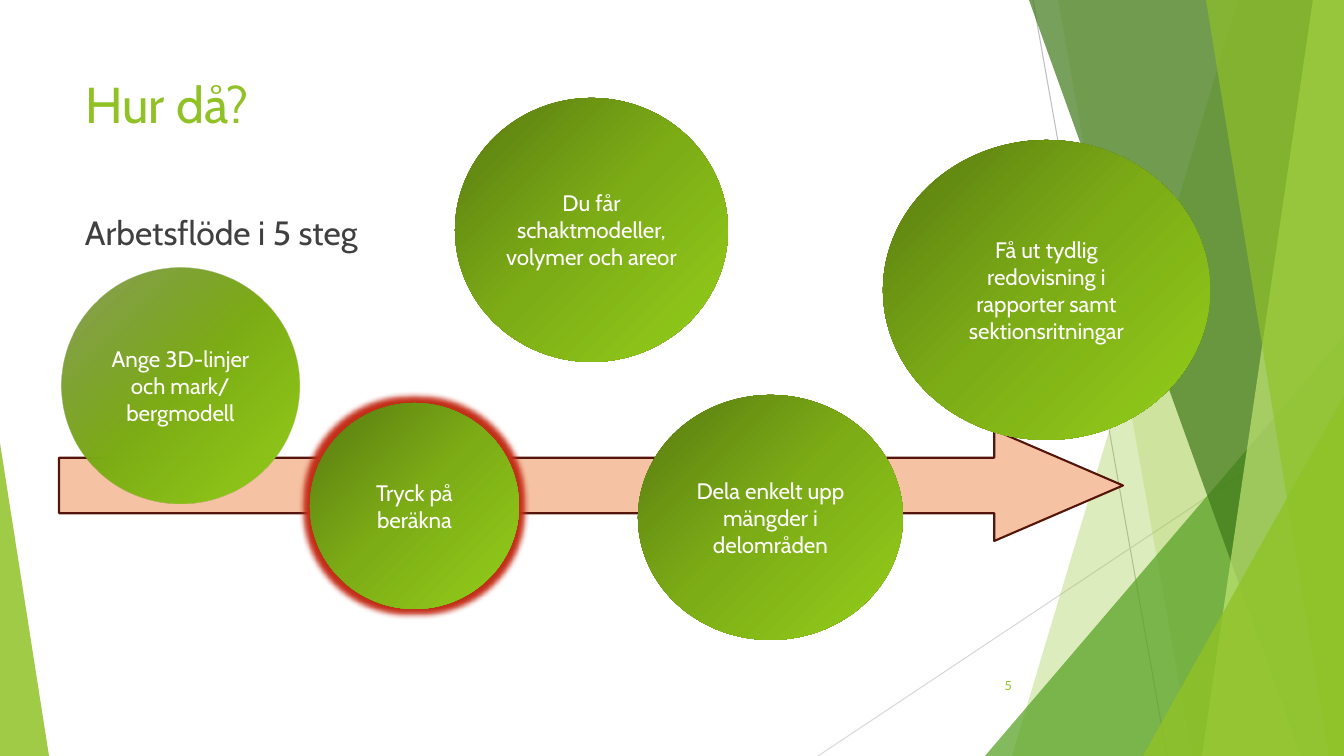
import pptx
import pptx.dml.color
import pptx.enum.shapes
import pptx.enum.text
import pptx.oxml
import pptx.oxml.ns
import pptx.util
from lxml import etree

PX = 914400 / 100.8
WIDTH, HEIGHT = 1344, 756
LIME = "90C226"
SHAPE = pptx.enum.shapes.MSO_SHAPE
ALIGN = pptx.enum.text.PP_ALIGN
ANCHOR = pptx.enum.text.MSO_ANCHOR
qn = pptx.oxml.ns.qn


def px(*lengths):
    return [round(length * PX) for length in lengths]


def rgb(colour):
    return pptx.dml.color.RGBColor.from_string(colour)


deck = pptx.Presentation()
deck.slide_width, deck.slide_height = px(WIDTH, HEIGHT)
slide = deck.slides.add_slide(deck.slide_layouts[5])
shapes = slide.shapes

# Thin lines behind the green facets
for ends, colour in [((1033, 0, 1167, HEIGHT), "BFBFBF"), ((WIDTH, 406, 818, HEIGHT), "D9D9D9")]:
    ray = shapes.add_connector(pptx.enum.shapes.MSO_CONNECTOR.STRAIGHT, *px(*ends))
    ray.line.color.rgb = rgb(colour)
    ray.line.width = pptx.util.Pt(0.75)
    etree.SubElement(ray.element.spPr, qn("a:effectLst"))

# Facets: (top x, bottom x) reaches the right edge; (left, top, width, height, apex) is a triangle
facets = [
    ((1238, 1012), LIME, 30),
    ((1058, 1192), LIME, 20),
    ((985, 336, 359, 420, 1), "54A021", 72),
    ((1029, 1301), "3F7819", 70),
    ((1313, 1202), "C0E474", 70),
    ((1206, 1329), LIME, 65),
    ((1143, 396, 201, 360, 1), LIME, 80),
    ((0, 443, 49, 313, 0), LIME, 85),
]
for outline, colour, opacity in facets:
    if len(outline) == 2:
        top_x, bottom_x = outline
        builder = shapes.build_freeform(top_x, 0, scale=PX)
        builder.add_line_segments([(WIDTH, 0), (WIDTH, HEIGHT), (bottom_x, HEIGHT)])
        facet = builder.convert_to_shape()
    else:
        *box, apex = outline
        facet = shapes.add_shape(SHAPE.ISOSCELES_TRIANGLE, *px(*box))
        facet.adjustments[0] = apex
    facet.shadow.inherit = False
    facet.line.fill.background()
    facet.fill.solid()
    facet.fill.fore_color.rgb = rgb(colour)
    tint = facet.element.spPr.find(qn("a:solidFill")).find(qn("a:srgbClr"))
    etree.SubElement(tint, qn("a:alpha"), val=str(opacity * 1000))

# Workflow arrow
arrow = shapes.add_shape(SHAPE.RIGHT_ARROW, *px(59, 430, 1064, 111))
arrow.adjustments[0] = 0.5
arrow.adjustments[1] = 1.16
arrow.shadow.inherit = False
arrow.fill.solid()
arrow.fill.fore_color.rgb = rgb("F5C2A3")
arrow.line.color.rgb = rgb("56150B")
arrow.line.width = pptx.util.Pt(1.5)

# Title, subtitle and slide number
title = shapes.title
title.left, title.top, title.width, title.height = px(75, 68, 948, 145)
subtitle = shapes.add_textbox(*px(75, 194, 462, 63))
number = shapes.add_textbox(*px(947, 666, 75, 40))
for holder, text, size, font, colour, anchor, align in [
    (title, "Hur då?", 36, "Cabin", LIME, ANCHOR.TOP, ALIGN.LEFT),
    (subtitle, "Arbetsflöde i 5 steg", 24, "Cabin", "404040", ANCHOR.BOTTOM, ALIGN.LEFT),
    (number, "5", 9, "Lato", LIME, ANCHOR.MIDDLE, ALIGN.RIGHT),
]:
    frame = holder.text_frame
    frame.text = text
    frame.word_wrap = True
    frame.auto_size = pptx.enum.text.MSO_AUTO_SIZE.NONE
    frame.vertical_anchor = anchor
    paragraph = frame.paragraphs[0]
    paragraph.alignment = align
    paragraph.font.size = pptx.util.Pt(size)
    paragraph.font.name = font
    paragraph.font.color.rgb = rgb(colour)

# The five steps: box, text, opacity of the dark end, glow colour
steps = [
    ((62, 268, 237, 235), "Ange 3D-linjer och mark/\nbergmodell", 69, None),
    ((310, 403, 209, 206), "Tryck på beräkna", 100, "C42F1A"),
    ((455, 98, 273, 264), "Du får schaktmodeller, volymer och areor", 100, None),
    ((638, 395, 265, 245), "Dela enkelt upp mängder i delområden", 100, None),
    ((883, 140, 327, 300), "Få ut tydlig redovisning i rapporter samt sektionsritningar", 100, None),
]
for box, text, dark_opacity, glow_colour in steps:
    step = shapes.add_shape(SHAPE.OVAL, *px(*box))
    step.shadow.inherit = False
    step.line.fill.background()
    step.fill.gradient()
    step.fill.gradient_angle = 315
    stops = step.element.spPr.find(qn("a:gradFill")).find(qn("a:gsLst"))
    stops.clear()
    for position, colour, opacity in [(0, "587A10", dark_opacity), (50, "7DAD16", 100), (100, "94CE1A", 100)]:
        stop = etree.SubElement(stops, qn("a:gs"), pos=str(position * 1000))
        tint = etree.SubElement(stop, qn("a:srgbClr"), val=colour)
        if opacity < 100:
            etree.SubElement(tint, qn("a:alpha"), val=str(opacity * 1000))
    if glow_colour:
        effects = step.element.spPr.find(qn("a:effectLst"))
        glow = etree.SubElement(effects, qn("a:glow"), rad=str(px(11)[0]))
        etree.SubElement(glow, qn("a:srgbClr"), val=glow_colour)
    frame = step.text_frame
    frame.text = text
    frame.word_wrap = True
    frame.vertical_anchor = ANCHOR.MIDDLE
    for paragraph in frame.paragraphs:
        paragraph.alignment = ALIGN.CENTER
        paragraph.font.size = pptx.util.Pt(16)
        paragraph.font.name = "Cabin"
        paragraph.font.color.rgb = rgb("FFFFFF")

deck.save("out.pptx")
